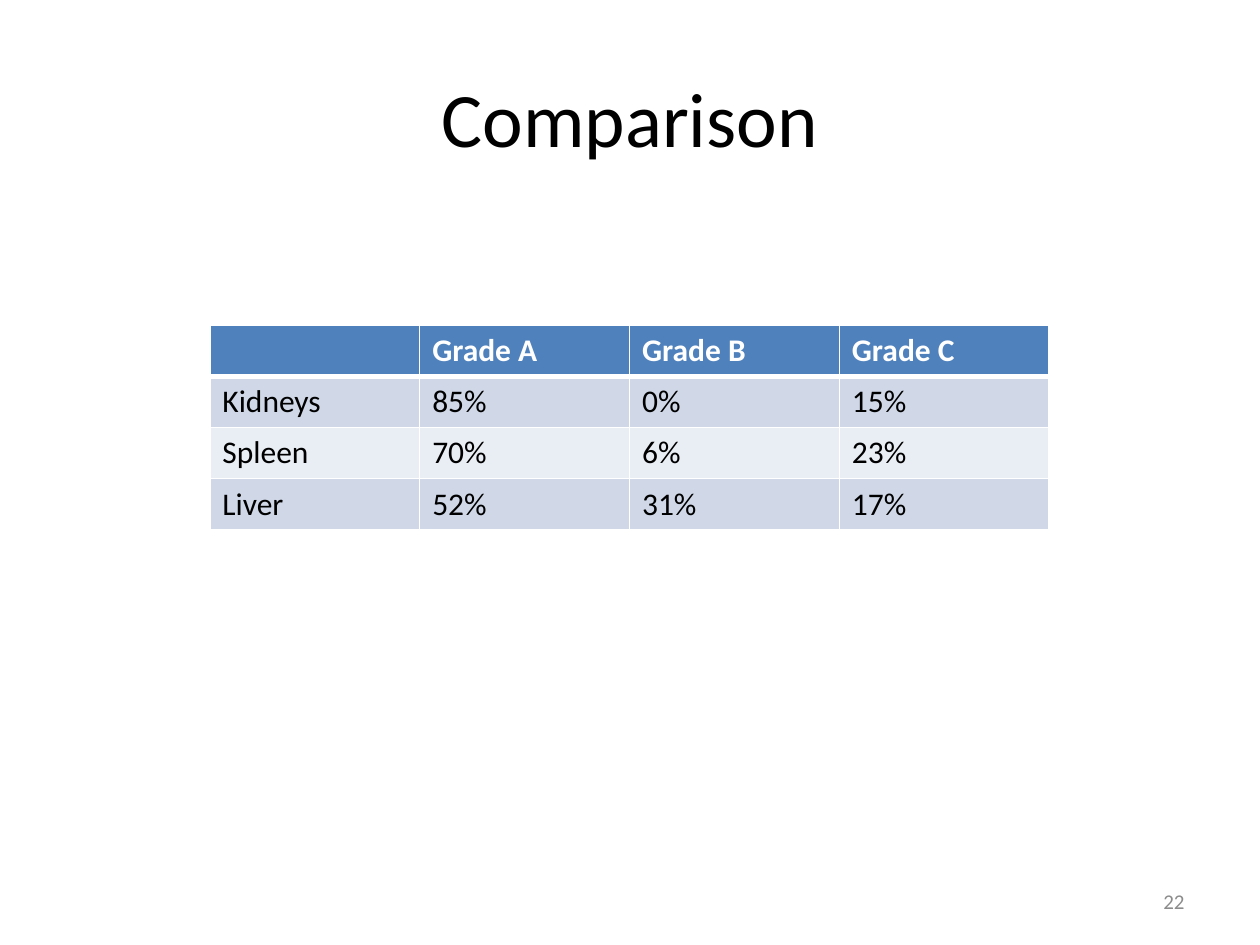
from dataclasses import dataclass

from lxml.etree import SubElement
from pptx import Presentation
from pptx.dml.color import RGBColor
from pptx.enum.text import MSO_ANCHOR, PP_ALIGN
from pptx.oxml.ns import qn
from pptx.util import Cm, Pt


@dataclass(frozen=True)
class Theme:
    font: str = "Calibri"
    ink: str = "000000"
    white: str = "FFFFFF"
    muted: str = "8C8C8C"
    header: str = "4F81BD"
    bands: tuple = ("D0D8E8", "E9EDF4")
    title_size: int = 44
    body_size: int = 18
    number_size: int = 12
    thin_border: int = 1
    header_border: int = 3


class SlideBuilder:
    def __init__(self, slide, theme):
        self.slide = slide
        self.theme = theme

    def add_styled_run(self, paragraph, text, size, color, bold=False):
        run = paragraph.add_run()
        run.text = text
        formats = {"name": self.theme.font, "size": Pt(size), "bold": bold}
        for name, value in formats.items():
            setattr(run.font, name, value)
        run.font.color.rgb = RGBColor.from_string(color)

    def text(self, text, box, size, color, alignment):
        shape = self.slide.shapes.add_textbox(*map(Cm, box))
        frame = shape.text_frame
        formats = {"word_wrap": True, "vertical_anchor": MSO_ANCHOR.MIDDLE}
        for name, value in formats.items():
            setattr(frame, name, value)
        paragraph = frame.paragraphs[0]
        paragraph.alignment = alignment
        self.add_styled_run(paragraph, text, size, color)

    def borders(self, cell, **widths):
        """Draw white cell borders; widths in points, keyed by L, R, T and B."""
        properties = cell._tc.get_or_add_tcPr()
        for side in "LRTB":
            width = Pt(widths.get(side, self.theme.thin_border))
            line = SubElement(properties, qn(f"a:ln{side}"), w=str(int(width)))
            fill = SubElement(line, qn("a:solidFill"))
            SubElement(fill, qn("a:srgbClr"), val=self.theme.white)

    def table(self, rows, left, top, column_width, row_height):
        theme = self.theme
        column_count = len(rows[0])
        table = self.slide.shapes.add_table(
            len(rows), column_count, Cm(left), Cm(top),
            Cm(column_width * column_count), Cm(row_height * len(rows)),
        ).table
        for row_index, row in enumerate(rows):
            is_header = row_index == 0
            fill = theme.header if is_header else theme.bands[(row_index - 1) % 2]
            color = theme.white if is_header else theme.ink
            thick_side = {0: "B", 1: "T"}.get(row_index)
            widths = {thick_side: theme.header_border} if thick_side else {}
            for column_index, text in enumerate(row):
                cell = table.cell(row_index, column_index)
                self.borders(cell, **widths)
                cell.fill.solid()
                cell.fill.fore_color.rgb = RGBColor.from_string(fill)
                if text:
                    paragraph = cell.text_frame.paragraphs[0]
                    self.add_styled_run(
                        paragraph, text, theme.body_size, color, is_header)


def main():
    presentation = Presentation()
    presentation.slide_width = Cm(25.4)
    presentation.slide_height = Cm(19.05)
    slide = presentation.slides.add_slide(presentation.slide_layouts[6])
    theme = Theme()
    builder = SlideBuilder(slide, theme)

    builder.text("Comparison", (1.27, 0.76, 22.86, 3.18),
                 theme.title_size, theme.ink, PP_ALIGN.CENTER)
    builder.text("22", (18.2, 17.66, 5.93, 1.01),
                 theme.number_size, theme.muted, PP_ALIGN.RIGHT)
    grades = [
        ("", "Grade A", "Grade B", "Grade C"),
        ("Kidneys", "85%", "0%", "15%"),
        ("Spleen", "70%", "6%", "23%"),
        ("Liver", "52%", "31%", "17%"),
    ]
    builder.table(grades, left=4.23, top=6.56, column_width=4.23, row_height=1.03)
    presentation.save("out.pptx")


if __name__ == "__main__":
    main()
